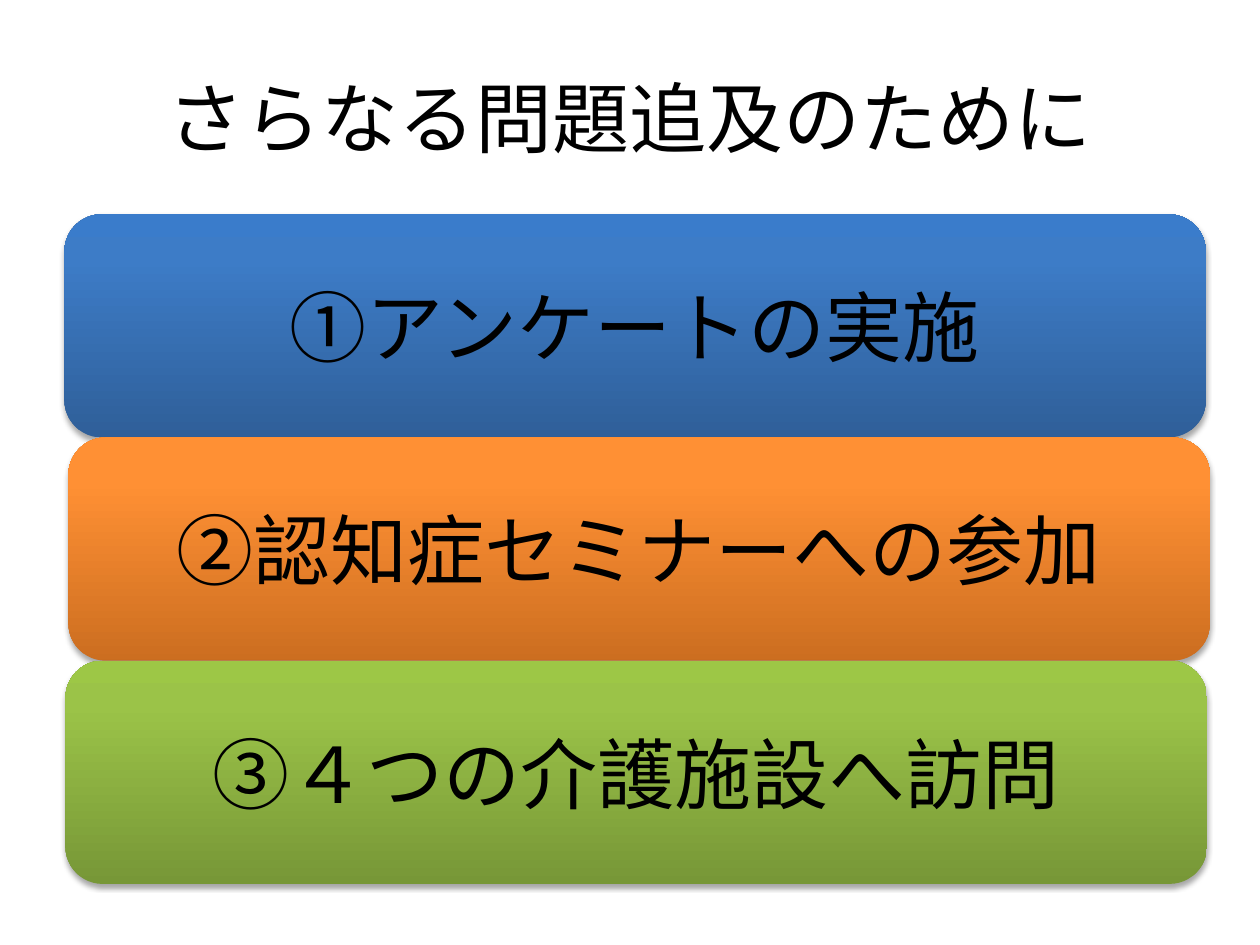
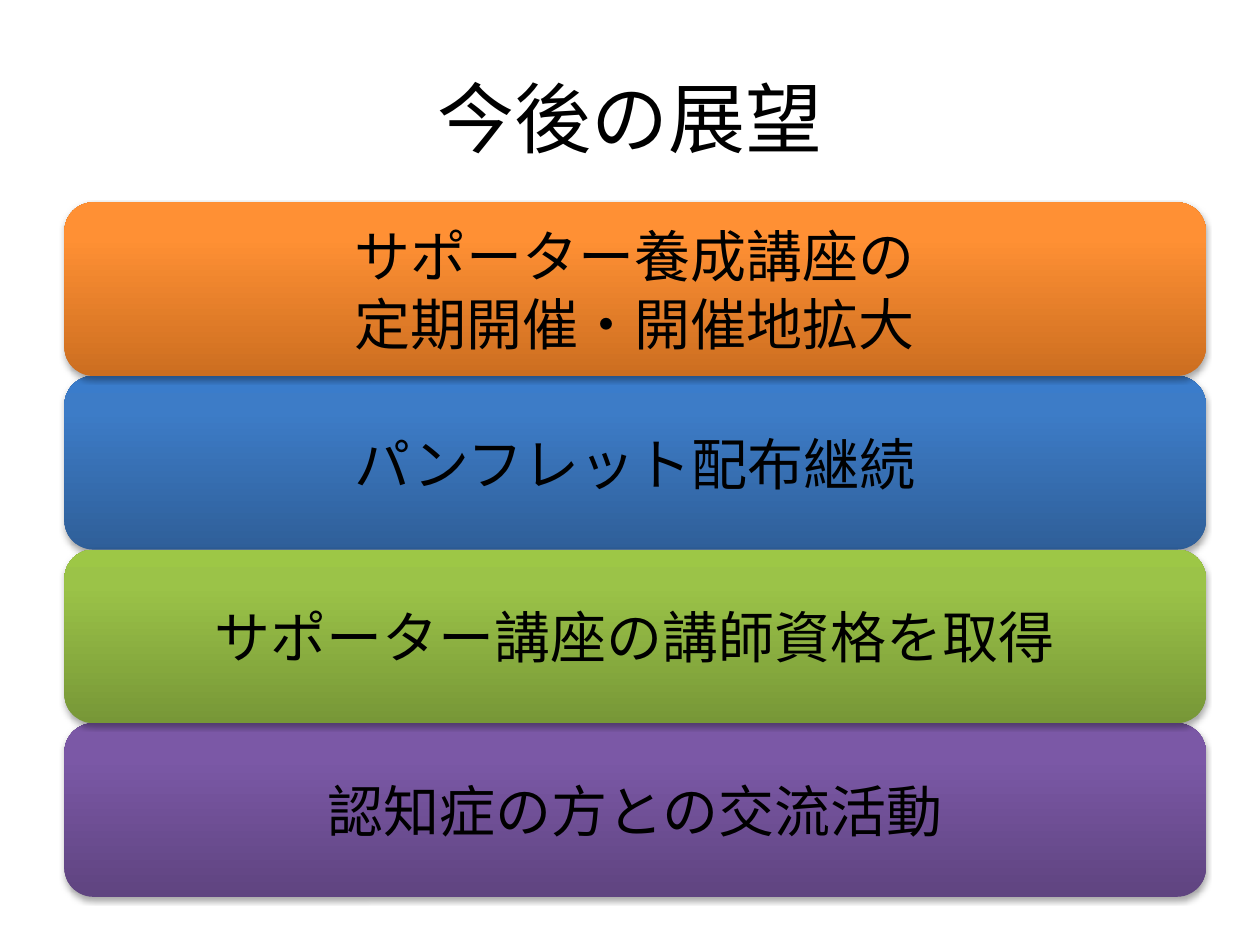
from pptx import Presentation
from pptx.dml.color import RGBColor
from pptx.enum.shapes import MSO_SHAPE
from pptx.enum.text import MSO_ANCHOR, PP_ALIGN
from pptx.oxml import parse_xml
from pptx.oxml.ns import nsdecls
from pptx.util import Cm, Pt

BLACK = "000000"
JAPANESE_FONT = "Noto Sans CJK JP"
BLUE = ("2F5F99", "3D7CC7", "3A7CCB")
ORANGE = ("CC6E20", "FF9034", "FF9136")
GREEN = ("779737", "9BC348", "9DC746")
PURPLE = ("5F4480", "7B58A6", "7C57A8")
STOPS = (0, 80, 100)
TITLE_BOX = (1.27, 0.76, 22.86, 3.18)
BAR_LEFT, BAR_WIDTH = 1.3, 23.01


def color(hex_string):
    """Turn a hex string into a colour."""
    return RGBColor.from_string(hex_string)


def write_text(shape, text, size, font=JAPANESE_FONT, fill=BLACK):
    """Fill a shape with centred text, one paragraph per line."""
    frame = shape.text_frame
    frame.word_wrap = True
    frame.vertical_anchor = MSO_ANCHOR.MIDDLE
    frame.text = text
    for paragraph in frame.paragraphs:
        paragraph.alignment = PP_ALIGN.CENTER
        for run in paragraph.runs:
            run.font.size = Pt(size)
            run.font.name = font
            run.font.color.rgb = color(fill)
            run.font._element.append(parse_xml(
                f'<a:ea {nsdecls("a")} typeface="{JAPANESE_FONT}"/>'))


def add_title(slide, text, box, font):
    """Place the slide title in its box."""
    title = slide.shapes.add_textbox(*map(Cm, box))
    write_text(title, text, size=44, font=font)


def style_bar(bar, shades):
    """Give a bar its upward gradient and soft shadow."""
    bar.line.fill.background()
    stops = "".join(
        f'<a:gs pos="{stop * 1000}"><a:srgbClr val="{shade}"/></a:gs>'
        for stop, shade in zip(STOPS, shades))
    gradient = parse_xml(
        f'<a:gradFill {nsdecls("a")} rotWithShape="1"><a:gsLst>{stops}</a:gsLst>'
        '<a:lin ang="16200000" scaled="0"/></a:gradFill>')
    shadow = parse_xml(
        f'<a:effectLst {nsdecls("a")}>'
        '<a:outerShdw blurRad="40000" dist="23000" dir="5400000" rotWithShape="0">'
        f'<a:srgbClr val="{BLACK}"><a:alpha val="35000"/></a:srgbClr>'
        '</a:outerShdw></a:effectLst>')
    outline = bar.line._ln
    outline.addprevious(gradient)
    outline.addnext(shadow)


def add_bar(slide, text, box, shades, size):
    """Add one rounded bar with its label."""
    bar = slide.shapes.add_shape(MSO_SHAPE.ROUNDED_RECTANGLE, *map(Cm, box))
    style_bar(bar, shades)
    write_text(bar, text, size)


def add_bar_slide(presentation, title, title_font, bars, top, height, size):
    """Add a titled slide of stacked bars, listed from back to front."""
    slide = presentation.slides.add_slide(presentation.slide_layouts[6])
    add_title(slide, title, TITLE_BOX, title_font)
    for row, shift, shades, text in bars:
        box = (BAR_LEFT + shift, top + row * height, BAR_WIDTH, height)
        add_bar(slide, text, box, shades, size)


def main():
    """Build and save the presentation."""
    presentation = Presentation()
    presentation.slide_width, presentation.slide_height = Cm(25.4), Cm(19.05)
    add_bar_slide(presentation, "さらなる問題追及のために", "Calibri", [
        (0, 0, BLUE, "①アンケートの実施"),
        (1, 0.08, ORANGE, "②認知症セミナーへの参加"),
        (2, 0.02, GREEN, "③４つの介護施設へ訪問"),
    ], top=4.32, height=4.5, size=44)
    add_bar_slide(presentation, "今後の展望", "Arial", [
        (1, 0, BLUE, "パンフレット配布継続"),
        (0, 0, ORANGE, "サポーター養成講座の\n定期開催・開催地拡大"),
        (3, 0, PURPLE, "認知症の方との交流活動"),
        (2, 0, GREEN, "サポーター講座の講師資格を取得"),
    ], top=4.08, height=3.5, size=32)
    presentation.save("out.pptx")


if __name__ == "__main__":
    main()
